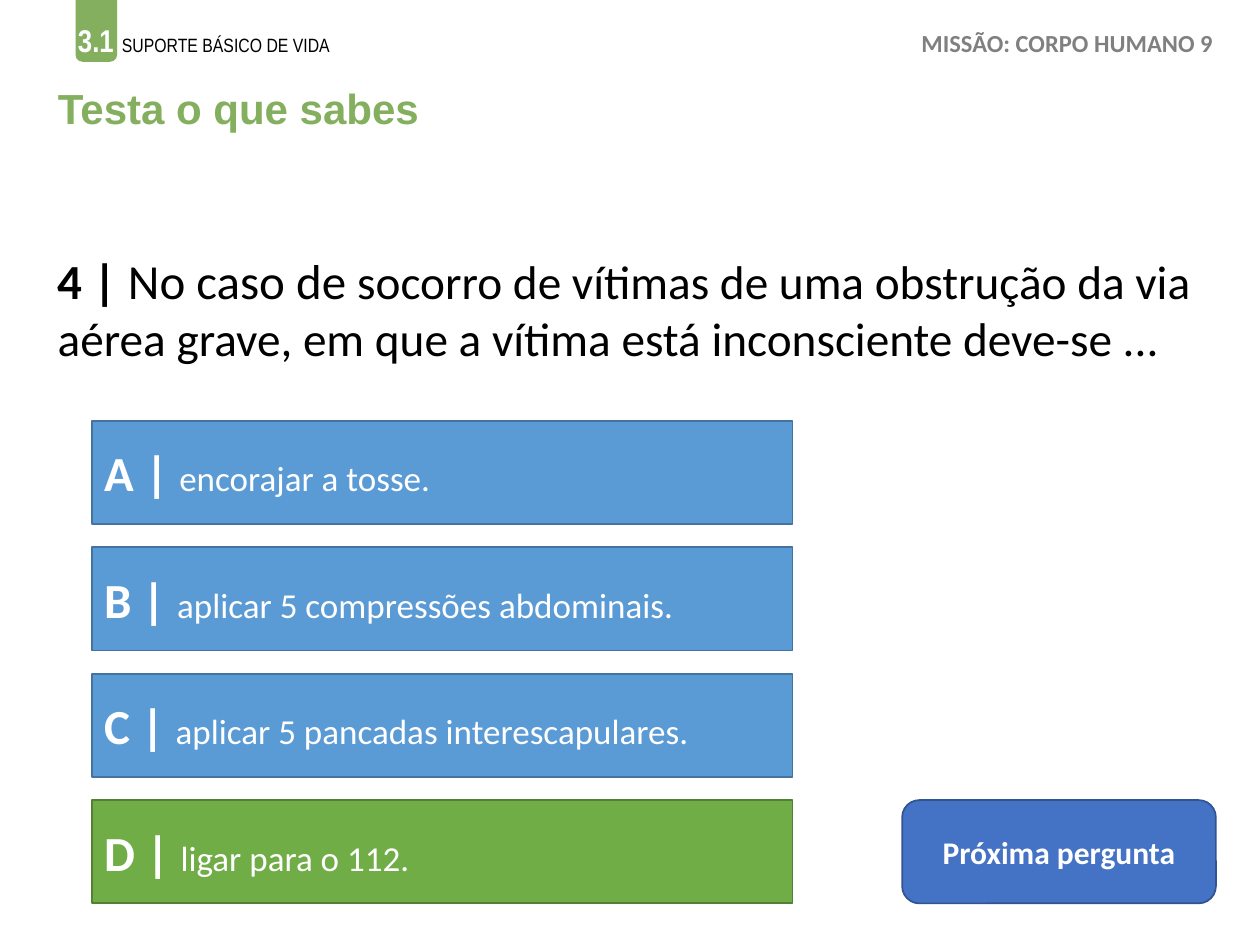
from pptx import Presentation
from pptx.dml.color import RGBColor
from pptx.enum.shapes import MSO_SHAPE
from pptx.enum.text import MSO_ANCHOR, MSO_AUTO_SIZE, PP_ALIGN
from pptx.util import Inches, Pt

COLORS = {
    "white": "FFFFFF", "black": "000000", "grey": "808080",
    "leaf": "84AF5F", "lime": "AFC439",
    "blue": "5B9BD5", "blue edge": "43739E",
    "green": "70AD47", "green edge": "538035",
    "royal": "4472C4", "royal edge": "325491",
}
OPTIONS = [
    ("A", "encorajar a tosse.", "blue"),
    ("B", "aplicar 5 compressões abdominais.", "blue"),
    ("C", "aplicar 5 pancadas interescapulares.", "blue"),
    ("D", "ligar para o 112.", "green"),
]
MARGIN, FULL_WIDTH = 3.6, 92.9
OPTION_TOP, OPTION_PITCH, BUTTON_HEIGHT = 44.53, 13.38, 10.93


def color(name):
    return RGBColor.from_string(COLORS[name])


class QuizPage:
    """Draws on one slide; every frame is (left, top, width, height) in percent."""

    def __init__(self, deck):
        self.size = (deck.slide_width, deck.slide_height)
        self.page = deck.slides.add_slide(deck.slide_layouts[5])

    def place(self, frame):
        return [round(share * self.size[index % 2] / 100)
                for index, share in enumerate(frame)]

    def set_text(self, shape, runs, font="Calibri", align=PP_ALIGN.LEFT,
                 anchor=MSO_ANCHOR.TOP):
        """Fill one paragraph with (text, size, color, bold) runs."""
        frame = shape.text_frame
        frame.word_wrap = True
        frame.vertical_anchor = anchor
        para = frame.paragraphs[0]
        para.alignment = align
        para.font.name = font
        for text, size, tint, bold in runs:
            span = para.add_run()
            span.text = text
            span.font.size = Pt(size)
            span.font.bold = bold
            span.font.color.rgb = color(tint)
        return para

    def title(self, frame, text):
        box = self.page.shapes.title
        box.left, box.top, box.width, box.height = self.place(frame)
        box.text_frame.auto_size = MSO_AUTO_SIZE.NONE
        para = self.set_text(box, [(text, 24, "leaf", True)], "Arial",
                             anchor=MSO_ANCHOR.MIDDLE)
        para.line_spacing = 0.9
        para.space_before = Pt(10)

    def text(self, frame, runs, **style):
        box = self.page.shapes.add_textbox(*self.place(frame))
        self.set_text(box, runs, **style)

    def block(self, kind, frame, fill, edge=None, runs=(), align=PP_ALIGN.LEFT):
        shape = self.page.shapes.add_shape(kind, *self.place(frame))
        shape.shadow.inherit = False
        shape.fill.solid()
        shape.fill.fore_color.rgb = color(fill)
        if edge:
            shape.line.color.rgb = color(edge)
            shape.line.width = Pt(1)
        else:
            shape.line.fill.background()
        self.set_text(shape, runs, align=align, anchor=MSO_ANCHOR.MIDDLE)


def main():
    deck = Presentation()
    deck.slide_width, deck.slide_height = Inches(10), Inches(7.5)
    quiz = QuizPage(deck)

    quiz.block(MSO_SHAPE.ROUNDED_RECTANGLE, (6, -1.73, 3.3, 8.27), "leaf")
    quiz.text((5.2, 1.2, 71.5, 5.87), [
        ("3.1", 18, "white", True),
        (" ", 20, "lime", True),
        ("SUPORTE BÁSICO DE VIDA", 11, "black", False),
    ], font="Arial Narrow")
    quiz.text((71.8, 2.27, 25.8, 4.53),
              [("MISSÃO: CORPO HUMANO 9", 14, "grey", True)],
              align=PP_ALIGN.CENTER)
    quiz.title((MARGIN, 7.6, FULL_WIDTH, 8.27), "Testa o que sabes")

    quiz.text((MARGIN, 25.87, FULL_WIDTH, 13.73), [
        ("4 |", 28, "black", True),
        (" No caso de ", 28, "black", False),
        ("socorro de vítimas de uma obstrução da via aérea grave, "
         "em que a vítima está inconsciente deve-se ...", 27, "black", False),
    ])
    for row, (letter, answer, fill) in enumerate(OPTIONS):
        top = OPTION_TOP + row * OPTION_PITCH
        quiz.block(MSO_SHAPE.RECTANGLE, (7.3, top, 55.6, BUTTON_HEIGHT),
                   fill, f"{fill} edge",
                   [(f"{letter} | ", 28, "white", True),
                    (answer, 20, "white", False)])

    last_top = OPTION_TOP + (len(OPTIONS) - 1) * OPTION_PITCH
    quiz.block(MSO_SHAPE.ROUNDED_RECTANGLE, (71.6, last_top, 24.9, BUTTON_HEIGHT),
               "royal", "royal edge",
               [("Próxima pergunta", 18, "white", True)], PP_ALIGN.CENTER)
    deck.save("out.pptx")


if __name__ == "__main__":
    main()
